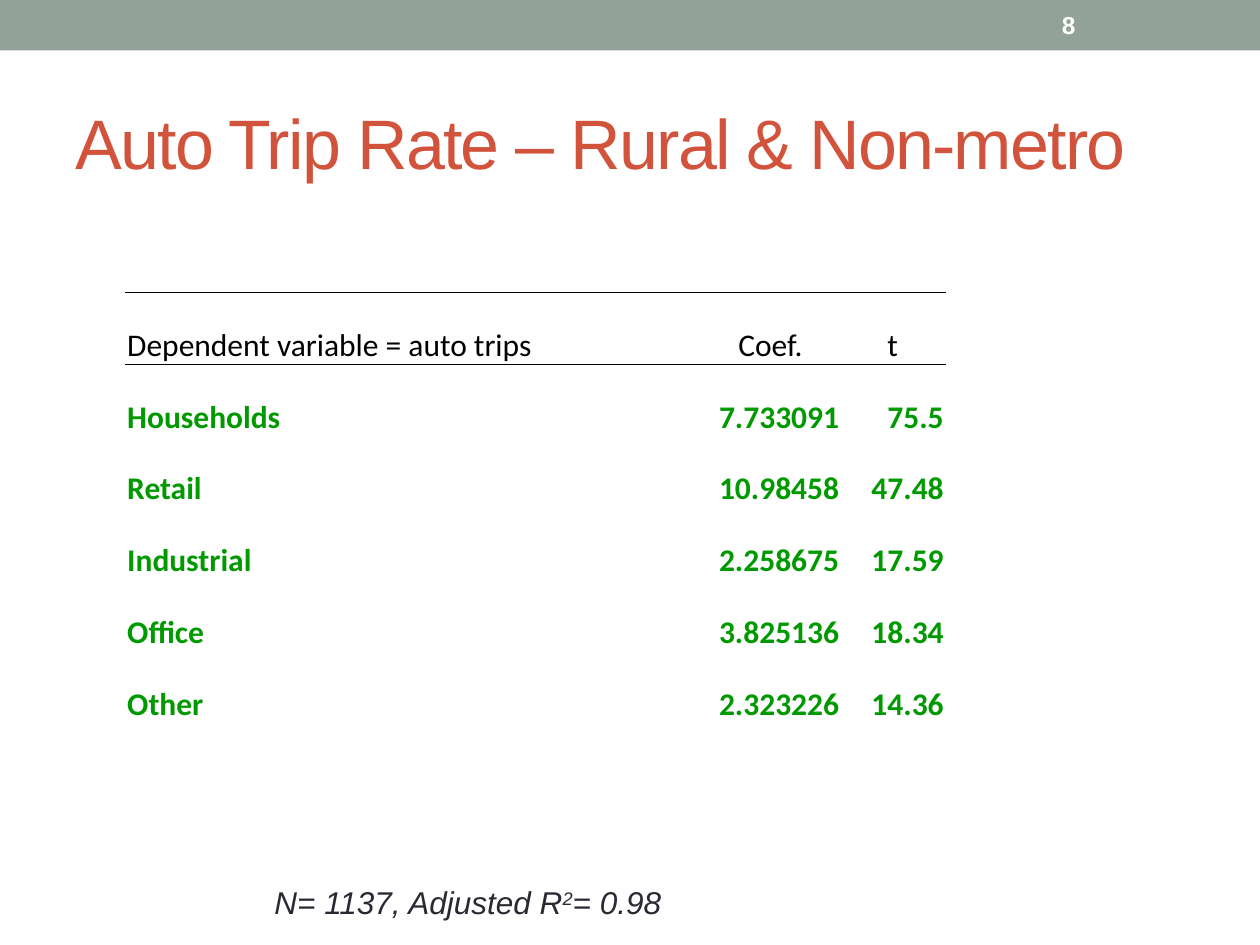
from lxml import etree
from pptx import Presentation
from pptx.dml.color import RGBColor
from pptx.enum import shapes, text
from pptx.oxml.ns import qn
from pptx.util import Inches, Pt

SAGE = RGBColor(0x93, 0xA2, 0x99)
RUST = RGBColor(0xD2, 0x53, 0x3C)
GREEN = RGBColor(0x00, 0x99, 0x00)
INK = RGBColor(0x29, 0x29, 0x34)
BLACK = RGBColor(0, 0, 0)
WHITE = RGBColor(255, 255, 255)

TITLE = "Auto Trip Rate – Rural & Non-metro"
PAGE = "8"
NOTE = [("N= 1137, Adjusted R", 0), ("2", 30), ("= 0.98", 0)]
ROWS = [
    ("", "", ""),
    ("Dependent variable = auto trips", "Coef.", "t"),
    ("Households", "7.733091", "75.5"),
    ("Retail", "10.98458", "47.48"),
    ("Industrial", "2.258675", "17.59"),
    ("Office", "3.825136", "18.34"),
    ("Other", "2.323226", "14.36"),
]
COLS = [4.56, 1.11, 0.83]
HEAD = 1
RULES = {0: ["b"], HEAD: ["t", "b"], HEAD + 1: ["t"]}


def add_run(para, words, size, color, font="Arial", bold=False, italic=False):
    run = para.add_run()
    run.text = words
    run.font.size, run.font.name = Pt(size), font
    run.font.bold, run.font.italic = bold, italic
    run.font.color.rgb = color
    return run


def add_box(slide, left, top, width, height, wrap=True):
    """Add a text box and return its frame, centred in height."""
    frame = slide.shapes.add_textbox(
        Inches(left), Inches(top), Inches(width), Inches(height)).text_frame
    frame.word_wrap = wrap
    frame.vertical_anchor = text.MSO_ANCHOR.MIDDLE
    return frame


def add_rule(cell, side):
    """Draw a thin black border; the fill must be set afterwards."""
    line = etree.SubElement(cell._tc.get_or_add_tcPr(),
                            qn("a:ln" + side.upper()), w=str(Pt(0.5)))
    fill = etree.SubElement(line, qn("a:solidFill"))
    etree.SubElement(fill, qn("a:srgbClr"), val=str(BLACK))


def fill_cell(cell, words, row, col):
    for side in RULES.get(row, []):
        add_rule(cell, side)
    cell.fill.background()
    if not words:
        return
    cell.margin_left = cell.margin_right = cell.margin_top = Inches(0.01)
    cell.margin_bottom = 0
    cell.vertical_anchor = text.MSO_ANCHOR.BOTTOM
    para = cell.text_frame.paragraphs[0]
    head = row == HEAD
    if col:
        para.alignment = text.PP_ALIGN.CENTER if head else text.PP_ALIGN.RIGHT
    add_run(para, words, 18, BLACK if head else GREEN, "Calibri", bold=not head)


def add_grid(slide):
    grid = slide.shapes.add_table(len(ROWS), len(COLS), Inches(1), Inches(1.75),
                                  Inches(sum(COLS)), Inches(4)).table
    grid.first_row = grid.horz_banding = False
    for col, width in enumerate(COLS):
        grid.columns[col].width = Inches(width)
    for row, line in enumerate(ROWS):
        for col, words in enumerate(line):
            fill_cell(grid.cell(row, col), words, row, col)


def main():
    deck = Presentation()
    deck.slide_width, deck.slide_height = Inches(10), Inches(7.5)
    slide = deck.slides.add_slide(deck.slide_layouts[6])

    band = slide.shapes.add_shape(shapes.MSO_SHAPE.RECTANGLE, 0, 0,
                                  deck.slide_width, Inches(0.4))
    band.shadow.inherit = False
    band.fill.solid()
    band.fill.fore_color.rgb = SAGE
    band.line.fill.background()

    title = add_box(slide, 0.5, 0.58, 9, 1.08)
    run = add_run(title.paragraphs[0], TITLE, 40, RUST)
    run.font._element.set("spc", "-100")

    add_grid(slide)

    page = add_box(slide, 8.33, 0.02, 1.17, 0.36)
    add_run(page.paragraphs[0], PAGE, 14, WHITE, bold=True)

    note = add_box(slide, 2.08, 6.96, 3.31, 0.4, wrap=False)
    note.auto_size = text.MSO_AUTO_SIZE.SHAPE_TO_FIT_TEXT
    for words, base in NOTE:
        run = add_run(note.paragraphs[0], words, 18, INK, italic=True)
        if base:
            run.font._element.set("baseline", str(base * 1000))

    deck.save("out.pptx")


if __name__ == "__main__":
    main()
